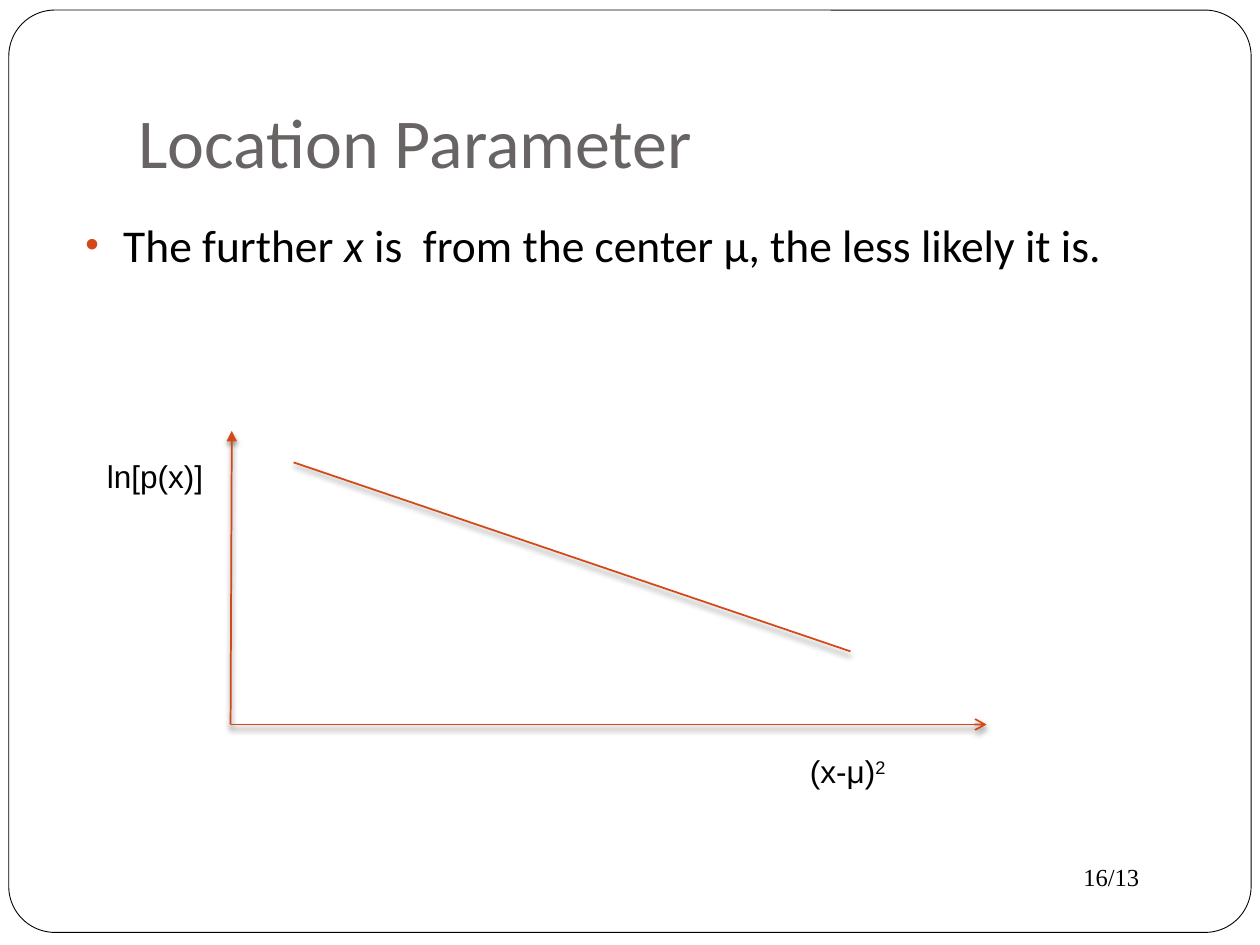
from lxml import etree
from pptx import Presentation
from pptx import util as u
from pptx.dml.color import RGBColor
from pptx.enum import shapes, text
from pptx.oxml import parse_xml
from pptx.oxml.ns import nsdecls, qn

PX = 9144  # 100 px to the inch
COLORS = {"paper": "FFFFFF", "ink": "000000", "title": "696464", "accent": "D34817"}


def px(*lengths):
    return [u.Emu(length * PX) for length in lengths]


def write(shape, *runs, font="Arial", size=18, color="ink", wrap=True,
          anchor=text.MSO_ANCHOR.TOP, margins=(10, 5, 10, 5)):
    """Fill a shape with one paragraph; each run is (words, style)."""
    frame = shape.text_frame
    frame.word_wrap = wrap
    frame.auto_size = text.MSO_AUTO_SIZE.NONE
    frame.vertical_anchor = anchor
    (frame.margin_left, frame.margin_top,
     frame.margin_right, frame.margin_bottom) = px(*margins)
    paragraph = frame.paragraphs[0]
    paragraph.alignment = text.PP_ALIGN.LEFT
    for words, style in runs:
        run = paragraph.add_run()
        run.text = words
        run.font.name = font
        run.font.size = u.Pt(size)
        run.font.color.rgb = RGBColor.from_string(COLORS[color])
        if style == "italic":
            run.font.italic = True
        if style == "superscript":
            run.font._element.set("baseline", "30000")
    return paragraph


presentation = Presentation()
presentation.slide_width, presentation.slide_height = px(1000, 750)
slide = presentation.slides.add_slide(presentation.slide_layouts[5])
title = slide.shapes.title

# Rounded frame, behind the title
frame = slide.shapes.add_shape(shapes.MSO_SHAPE.ROUNDED_RECTANGLE, *px(7, 8, 986, 732))
frame.adjustments[0] = 0.05
frame.shadow.inherit = False
frame.fill.solid()
frame.fill.fore_color.rgb = RGBColor.from_string(COLORS["paper"])
frame.line.color.rgb = RGBColor.from_string(COLORS["ink"])
frame.line.width = u.Pt(0.5)
title._element.addprevious(frame._element)

# Title
title.left, title.top, title.width, title.height = px(100, 30, 850, 125)
write(title, ("Location Parameter", ""), font="Calibri", size=40, color="title",
      anchor=text.MSO_ANCHOR.BOTTOM, margins=(10, 5, 10, 10))

# Bulleted statement
statement = slide.shapes.add_textbox(*px(58, 167, 867, 117))
paragraph = write(statement, ("The further ", ""), ("x", "italic"),
                  (" is  from the center μ, the less likely it is.", ""),
                  font="Calibri", size=26)
paragraph.space_before = u.Pt(5.8)
properties = paragraph._p.get_or_add_pPr()
properties.set("marL", str(30 * PX))
properties.set("indent", str(-30 * PX))
color = etree.SubElement(properties, qn("a:buClr"))
etree.SubElement(color, qn("a:srgbClr"), val=COLORS["accent"])
etree.SubElement(properties, qn("a:buSzPct"), val="85000")
etree.SubElement(properties, qn("a:buFont"), typeface="Arial")
etree.SubElement(properties, qn("a:buChar"), char="•")

# Axis labels and page number
write(slide.shapes.add_textbox(*px(75, 358, 97, 40)), ("ln[p(x)]", ""), wrap=False)
write(slide.shapes.add_textbox(*px(633, 592, 142, 40)),
      ("(x-μ)", ""), ("2", "superscript"))
write(slide.shapes.add_textbox(*px(850, 679, 100, 34)), ("16/13", ""),
      font="Times New Roman", size=14)

# Axes and falling line: end points, arrowhead tag, arrowhead type
for points, end, arrow in [
    ((184, 342, 183, 575), "a:headEnd", "triangle"),
    ((183, 575, 783, 575), "a:tailEnd", "arrow"),
    ((233, 367, 675, 517), None, None),
]:
    line = slide.shapes.add_connector(shapes.MSO_CONNECTOR.STRAIGHT, *px(*points))
    line.line.color.rgb = RGBColor.from_string(COLORS["accent"])
    line.line.width = u.Pt(1)
    if end:
        etree.SubElement(line.line._get_or_add_ln(), qn(end), type=arrow)
    line._element.spPr.append(parse_xml(
        f'<a:effectLst {nsdecls("a")}><a:outerShdw blurRad="38100" dist="25400" '
        f'dir="5400000" rotWithShape="0"><a:srgbClr val="{COLORS["ink"]}">'
        '<a:alpha val="50000"/></a:srgbClr></a:outerShdw></a:effectLst>'))

presentation.save("out.pptx")
